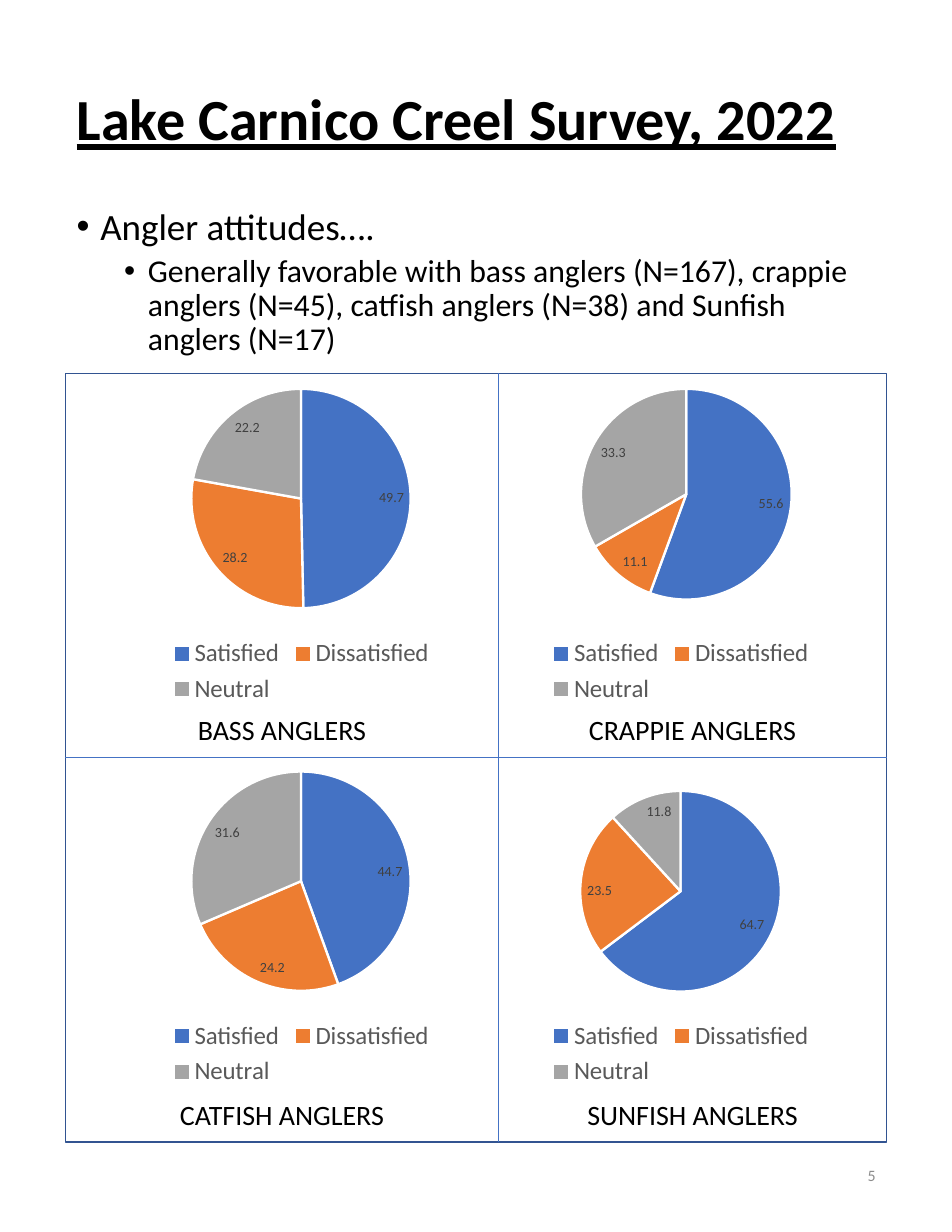
from lxml import etree
from pptx import Presentation
from pptx.chart.data import CategoryChartData
from pptx.dml.color import RGBColor
from pptx.enum import chart as chart_enum, shapes, text
from pptx.oxml import parse_xml
from pptx.oxml.ns import nsdecls, qn
from pptx.util import Pt

TITLE = "Lake Carnico Creel Survey, 2022"
# text, level, size key, left margin, space before
BULLETS = [
    ("Angler attitudes….", 0, "bullet", 15.3, 8.5),
    ("Generally favorable with bass anglers (N=167), crappie anglers (N=45), "
     "catfish anglers (N=38) and Sunfish anglers (N=17)", 1, "sub_bullet", 45.9, 4.2),
]
HANGING = 15.3
PAGE_NUMBER = "5"
CATEGORIES = ["Satisfied", "Dissatisfied", "Neutral"]
# caption, row, column, values, pie (left, top, diameter) inside its chart
SURVEYS = [
    ("BASS ANGLERS", 0, 0, (49.7, 28.2, 22.2), (61, 10, 141)),
    ("CRAPPIE ANGLERS", 0, 1, (55.6, 11.1, 33.3), (67.5, 10, 135.5)),
    ("CATFISH ANGLERS", 1, 0, (44.7, 24.2, 31.6), (61, 10, 141)),
    ("SUNFISH ANGLERS", 1, 1, (64.7, 23.5, 11.8), (67, 22.5, 129)),
]

THEME = {
    "font": "Calibri",
    "sizes": {"title": 37.4, "bullet": 23.8, "sub_bullet": 20.4, "page": 10.2,
              "caption": 18, "legend": 16, "label": 9, "chart": 10},
    "colors": {"text": "000000", "page": "8C8C8C", "legend": "595959", "label": "404040",
               "frame": "325491", "divider": "4472C4", "slice_edge": "FFFFFF"},
    "slices": ["4472C4", "ED7D31", "A5A5A5"],
}

PAGE_WIDTH, PAGE_HEIGHT = 612, 792
LEFT, WIDTH = 42, 528
RIGHT = LEFT + WIDTH
FRAME_TOP, FRAME_HEIGHT = 240, 494
DIVIDER_X = 320.5
COLUMN_EDGES = [LEFT, DIVIDER_X, RIGHT]
CHART_LEFTS, CHART_TOPS = [62, 306], [240, 486]
CHART_WIDTH, CHART_HEIGHT = 263.5, 216
CAPTION_TOPS, CAPTION_HEIGHT = [454.5, 702], 29


def color(name):
    return RGBColor.from_string(THEME["colors"][name])


def style_font(font, size, color_name="text"):
    font.name = THEME["font"]
    font.size = Pt(THEME["sizes"][size])
    font.color.rgb = color(color_name)


def place(shape, *box):
    shape.left, shape.top, shape.width, shape.height = map(Pt, box)


def add_label(slide, words, box, size, color_name, alignment, anchor):
    frame = slide.shapes.add_textbox(*map(Pt, box)).text_frame
    frame.word_wrap = True
    frame.vertical_anchor = anchor
    frame.text = words
    paragraph = frame.paragraphs[0]
    paragraph.alignment = alignment
    style_font(paragraph.runs[0].font, size, color_name)


def add_title(slide):
    title = slide.shapes.title
    place(title, LEFT, 42.5, WIDTH, 72)
    frame = title.text_frame
    frame.text = TITLE
    frame.auto_size = text.MSO_AUTO_SIZE.NONE
    frame.vertical_anchor = text.MSO_ANCHOR.MIDDLE
    paragraph = frame.paragraphs[0]
    paragraph.alignment = text.PP_ALIGN.LEFT
    paragraph.line_spacing = 0.9
    font = paragraph.runs[0].font
    style_font(font, "title")
    font.bold = font.underline = True


def add_bullets(slide):
    body = slide.placeholders[1]
    place(body, LEFT, 130.3, WIDTH, 636)
    frame = body.text_frame
    frame.text = "\n".join(bullet[0] for bullet in BULLETS)
    frame.auto_size = text.MSO_AUTO_SIZE.NONE
    for paragraph, (_, level, size, margin, before) in zip(frame.paragraphs, BULLETS):
        paragraph.level = level
        paragraph.line_spacing = 0.9
        paragraph.space_before = Pt(before)
        style_font(paragraph.runs[0].font, size)
        properties = paragraph._p.get_or_add_pPr()
        properties.set("marL", str(Pt(margin)))
        properties.set("indent", str(-Pt(HANGING)))
        etree.SubElement(properties, qn("a:buFont")).set("typeface", "Arial")
        etree.SubElement(properties, qn("a:buChar")).set("char", "•")


def set_pie_layout(chart, left, top, diameter):
    """Fix the pie's circle, given in points inside the chart."""
    values = {"x": left / CHART_WIDTH, "y": top / CHART_HEIGHT,
              "w": diameter / CHART_WIDTH, "h": diameter / CHART_HEIGHT}
    parts = "".join(f'<c:{key} val="{value:.4f}"/>' for key, value in values.items())
    plot_area = chart._chartSpace.chart.plotArea
    for layout in plot_area.findall(qn("c:layout")):
        plot_area.remove(layout)
    plot_area.insert(0, parse_xml(
        f'<c:layout {nsdecls("c")}><c:manualLayout><c:layoutTarget val="inner"/>'
        f'<c:xMode val="edge"/><c:yMode val="edge"/>{parts}</c:manualLayout></c:layout>'))


def add_pie(slide, row, column, values, circle):
    data = CategoryChartData()
    data.categories = CATEGORIES
    data.add_series("Series 1", values)
    box = CHART_LEFTS[column], CHART_TOPS[row], CHART_WIDTH, CHART_HEIGHT
    chart = slide.shapes.add_chart(chart_enum.XL_CHART_TYPE.PIE, *map(Pt, box), data).chart
    style_font(chart.font, "chart")
    chart.has_title = False
    chart.has_legend = True
    chart.legend.position = chart_enum.XL_LEGEND_POSITION.BOTTOM
    chart.legend.include_in_layout = False
    style_font(chart.legend.font, "legend", "legend")
    plot = chart.plots[0]
    plot.vary_by_categories = True
    plot.has_data_labels = True
    labels = plot.data_labels
    labels.show_value = True
    labels.show_percentage = False
    labels.position = chart_enum.XL_LABEL_POSITION.INSIDE_END
    style_font(labels.font, "label", "label")
    for index, fill in enumerate(THEME["slices"]):
        slice_format = plot.series[0].points[index].format
        slice_format.fill.solid()
        slice_format.fill.fore_color.rgb = RGBColor.from_string(fill)
        slice_format.line.color.rgb = color("slice_edge")
        slice_format.line.width = Pt(1.5)
    set_pie_layout(chart, *circle)


def add_divider(slide, *ends):
    line = slide.shapes.add_connector(shapes.MSO_CONNECTOR.STRAIGHT, *map(Pt, ends))
    line.line.color.rgb = color("divider")
    line.line.width = Pt(0.5)
    etree.SubElement(line._element.spPr, qn("a:effectLst"))
    return line


def add_grid(slide):
    frame = slide.shapes.add_shape(
        shapes.MSO_SHAPE.RECTANGLE, *map(Pt, (LEFT, FRAME_TOP, WIDTH, FRAME_HEIGHT)))
    frame.shadow.inherit = False
    frame.fill.background()
    frame.line.color.rgb = color("frame")
    frame.line.width = Pt(1)
    middle = FRAME_TOP + FRAME_HEIGHT / 2
    across = add_divider(slide, LEFT, middle, RIGHT, middle)
    across.begin_connect(frame, 1)
    across.end_connect(frame, 3)
    add_divider(slide, DIVIDER_X, FRAME_TOP, DIVIDER_X, FRAME_TOP + FRAME_HEIGHT)


def main():
    presentation = Presentation()
    presentation.slide_width, presentation.slide_height = Pt(PAGE_WIDTH), Pt(PAGE_HEIGHT)
    slide = presentation.slides.add_slide(presentation.slide_layouts[1])
    add_title(slide)
    add_bullets(slide)
    add_label(slide, PAGE_NUMBER, (432, 734, 138, 42.5), "page", "page",
              text.PP_ALIGN.RIGHT, text.MSO_ANCHOR.MIDDLE)
    for _, row, column, values, circle in SURVEYS:
        add_pie(slide, row, column, values, circle)
    add_grid(slide)
    for caption, row, column, _, _ in SURVEYS:
        left, right = COLUMN_EDGES[column:column + 2]
        add_label(slide, caption, (left, CAPTION_TOPS[row], right - left, CAPTION_HEIGHT),
                  "caption", "text", text.PP_ALIGN.CENTER, text.MSO_ANCHOR.TOP)
    presentation.save("out.pptx")


if __name__ == "__main__":
    main()
